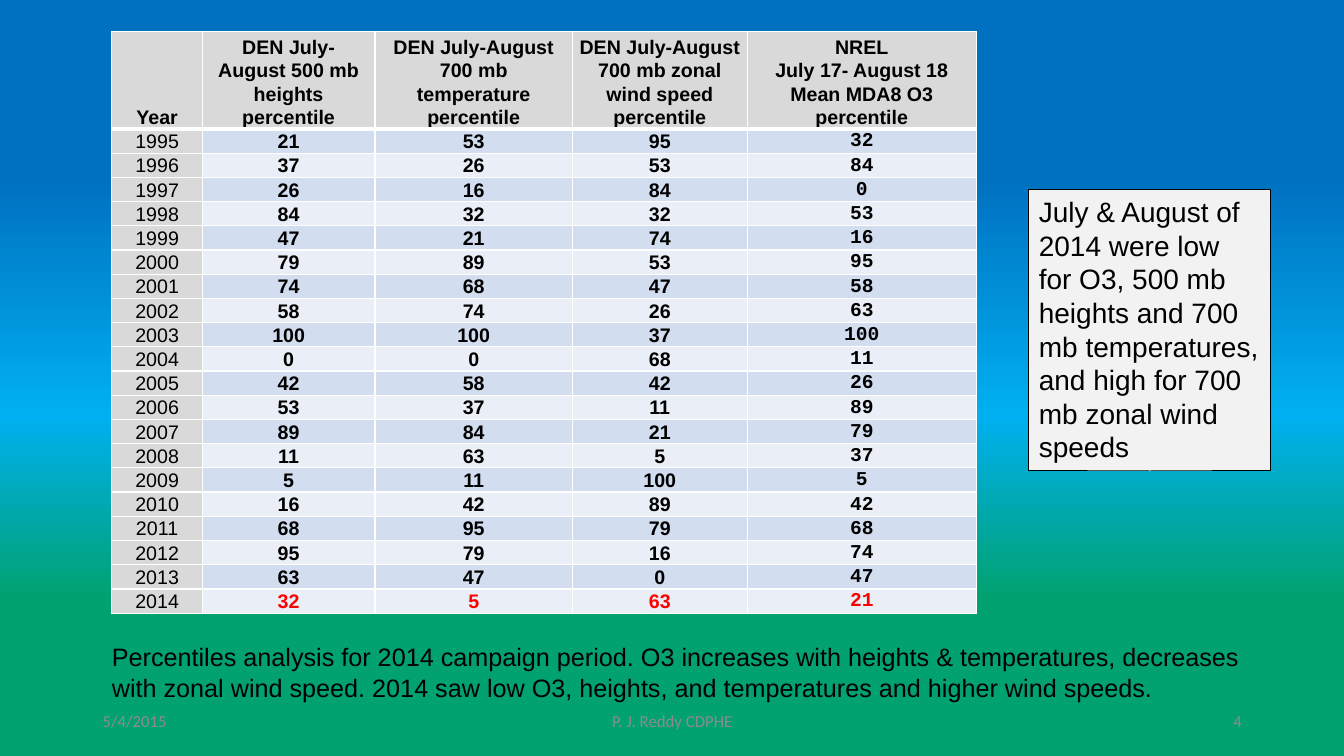
import pptx
import pptx.util
import pptx.dml.color
import pptx.enum.shapes
import pptx.enum.text
import lxml.etree
from dataclasses import dataclass
from pptx.util import Cm, Pt

ALIGN = pptx.enum.text.PP_ALIGN
ANCHOR = pptx.enum.text.MSO_ANCHOR
FIT = pptx.enum.text.MSO_AUTO_SIZE


@dataclass
class Theme:
    black: str = "000000"
    white: str = "FFFFFF"
    red: str = "FF0000"
    head: str = "D9D9D9"
    odd: str = "D2DEEF"
    even: str = "EAEFF7"
    note: str = "F2F2F2"
    foot: str = "8C8C8C"
    sky: tuple = ((21, "01A270"), (45, "00B0F0"), (77, "0070C0"), (95, "0070C0"))
    sans: str = "Arial"
    mono: str = "Courier New"
    small: str = "Calibri"
    cell_pt: int = 14
    text_pt: int = 18
    note_pt: int = 20
    foot_pt: int = 12


theme = Theme()


def rgb(code):
    return pptx.dml.color.RGBColor.from_string(code)


def write(frame, lines, size, face, color, align=ALIGN.LEFT, bold=False, space=None):
    frame.text = "\n".join(lines)
    for par in frame.paragraphs:
        par.alignment = align
        par.line_spacing = space
        par.font.size = Pt(size)
        par.font.name = face
        par.font.bold = bold
        par.font.color.rgb = rgb(color)


deck = pptx.Presentation()
deck.slide_width, deck.slide_height = Cm(33.87), Cm(19.05)
slide = deck.slides.add_slide(deck.slide_layouts[6])
shapes = slide.shapes

# Background: green ground rising to blue sky
back = slide.background.fill
back.gradient()
back.gradient_angle = 90
stops = slide.background._cSld.find(".//" + pptx.oxml.ns.qn("a:gsLst"))
for old in list(stops):
    stops.remove(old)
for pos, code in theme.sky:
    stop = lxml.etree.SubElement(stops, pptx.oxml.ns.qn("a:gs"), pos=str(pos * 1000))
    lxml.etree.SubElement(stop, pptx.oxml.ns.qn("a:srgbClr"), val=code)

# Percentile table
heads = [
    ["Year"],
    ["DEN July-August 500 mb heights percentile"],
    ["DEN July-August 700 mb temperature percentile"],
    ["DEN July-August 700 mb zonal wind speed percentile"],
    ["NREL", "July 17- August 18 Mean MDA8 O3 percentile"],
]
ranks = [
    (21, 53, 95, 32), (37, 26, 53, 84), (26, 16, 84, 0), (84, 32, 32, 53),
    (47, 21, 74, 16), (79, 89, 53, 95), (74, 68, 47, 58), (58, 74, 26, 63),
    (100, 100, 37, 100), (0, 0, 68, 11), (42, 58, 42, 26), (53, 37, 11, 89),
    (89, 84, 21, 79), (11, 63, 5, 37), (5, 11, 100, 5), (16, 42, 89, 42),
    (68, 95, 79, 68), (95, 79, 16, 74), (63, 47, 0, 47), (32, 5, 63, 21),
]
rows = [heads] + [
    [[str(val)] for val in (year, *vals)] for year, vals in enumerate(ranks, 1995)
]
widths = [2.28, 4.35, 4.98, 4.4, 5.78]
tall, low = 2.46, 0.61
table = shapes.add_table(
    len(rows), len(widths), Cm(2.82), Cm(0.79),
    Cm(sum(widths)), Cm(tall + low * len(ranks)),
).table
table.horz_banding = False
for col, width in zip(table.columns, widths):
    col.width = Cm(width)

for r, row in enumerate(rows):
    top, last = r == 0, r == len(ranks)
    table.rows[r].height = Cm(tall if top else low)
    for c, lines in enumerate(row):
        cell = table.cell(r, c)
        mono = c == 4 and not top
        side = Cm(0.03 if mono else 0.17)
        cell.margin_left = cell.margin_right = side
        cell.margin_top, cell.margin_bottom = Cm(0.03 if mono else 0), 0
        cell.vertical_anchor = ANCHOR.BOTTOM if top else ANCHOR.MIDDLE
        write(
            cell.text_frame, lines, theme.cell_pt,
            theme.mono if mono else theme.sans,
            theme.red if last and c else theme.black,
            ALIGN.CENTER, bold=top or c > 0, space=None if mono else 1.07,
        )
        # White borders, heavier below the header
        props = cell._tc.get_or_add_tcPr()
        for edge in "LRTB":
            heavy = (top and edge == "B") or (r == 1 and edge == "T")
            line = lxml.etree.SubElement(
                props, pptx.oxml.ns.qn("a:ln" + edge), w=str(Pt(3 if heavy else 1))
            )
            fill = lxml.etree.SubElement(line, pptx.oxml.ns.qn("a:solidFill"))
            lxml.etree.SubElement(fill, pptx.oxml.ns.qn("a:srgbClr"), val=theme.white)
        cell.fill.solid()
        band = theme.odd if r % 2 else theme.even
        cell.fill.fore_color.rgb = rgb(theme.head if top or c == 0 else band)

# Caption under the table
frame = shapes.add_textbox(Cm(2.57), Cm(16.03), Cm(29.13), Cm(1.8)).text_frame
frame.word_wrap = True
frame.auto_size = FIT.SHAPE_TO_FIT_TEXT
frame.vertical_anchor = ANCHOR.MIDDLE
write(frame, [
    "Percentiles analysis for 2014 campaign period. O3 increases with heights & temperatures, decreases",
    "with zonal wind speed. 2014 saw low O3, heights, and temperatures and higher wind speeds.",
], theme.text_pt, theme.sans, theme.black)

# Side note
note = shapes.add_shape(
    pptx.enum.shapes.MSO_SHAPE.RECTANGLE, Cm(25.93), Cm(4.78), Cm(6.1), Cm(7.09)
)
note.shadow.inherit = False
note.fill.solid()
note.fill.fore_color.rgb = rgb(theme.note)
note.line.color.rgb = rgb(theme.black)
note.line.width = Pt(0.75)
frame = note.text_frame
frame.word_wrap = False
frame.auto_size = FIT.SHAPE_TO_FIT_TEXT
frame.vertical_anchor = ANCHOR.TOP
write(frame, [
    "July & August of", "2014 were low", "for O3, 500 mb", "heights and 700",
    "mb temperatures,", "and high for 700", "mb zonal wind", "speeds",
], theme.note_pt, theme.sans, theme.black)

# Footer: date, author, page number
for left, width, text, align in [
    (2.34, 7.62, "5/4/2015", ALIGN.LEFT),
    (11.23, 11.43, "P. J. Reddy CDPHE", ALIGN.CENTER),
    (23.93, 7.62, "4", ALIGN.RIGHT),
]:
    frame = shapes.add_textbox(Cm(left), Cm(17.65), Cm(width), Cm(1.02)).text_frame
    frame.word_wrap = True
    frame.vertical_anchor = ANCHOR.MIDDLE
    write(frame, [text], theme.foot_pt, theme.small, theme.foot, align)

deck.save("out.pptx")
